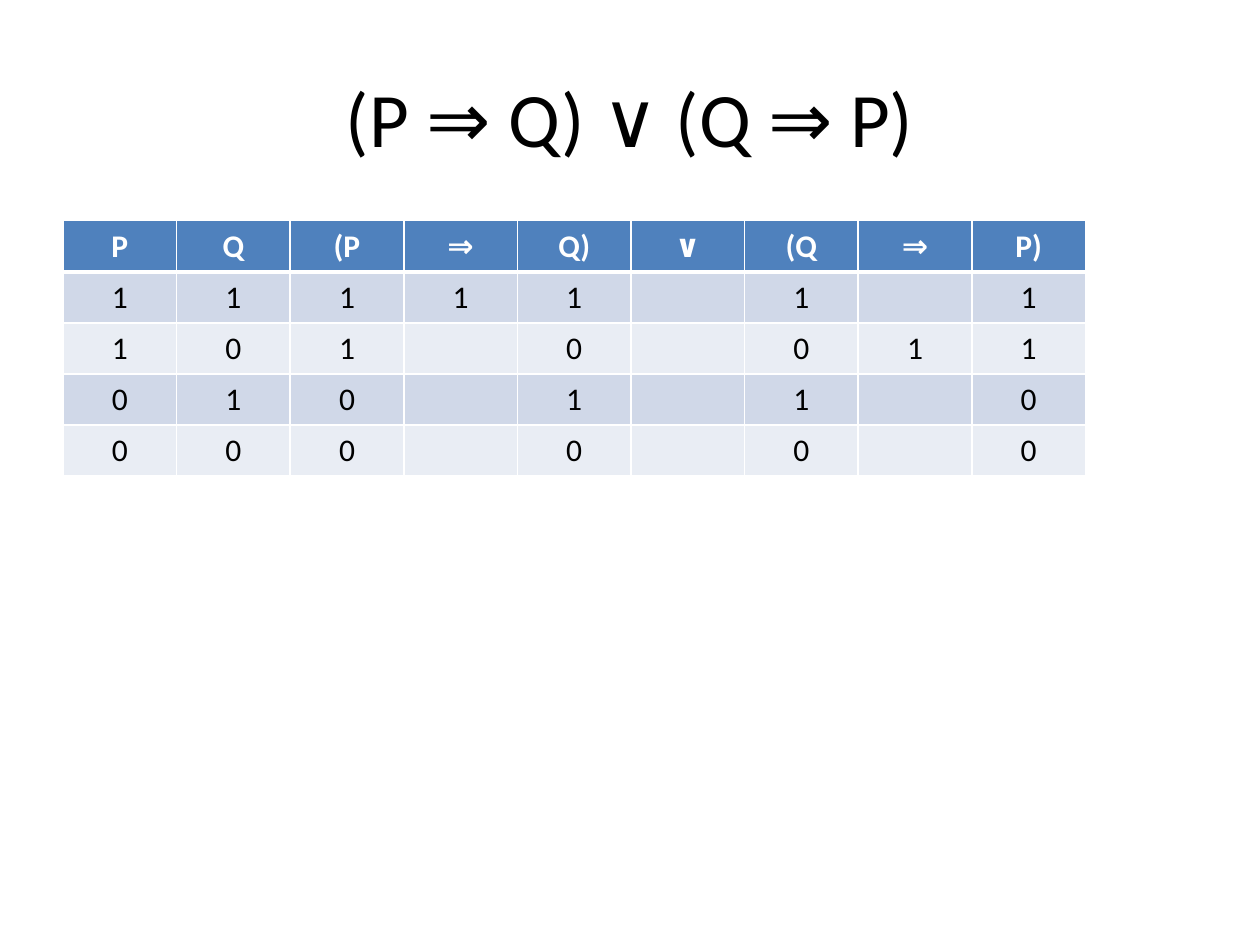
from dataclasses import dataclass

from lxml import etree
from pptx import Presentation
from pptx import util as u
from pptx.dml import color
from pptx.enum import text
from pptx.oxml import ns


@dataclass(frozen=True)
class Theme:
    font: str = "Calibri"
    title_size: int = 44
    cell_size: int = 18
    ink: str = "000000"
    paper: str = "FFFFFF"
    header: str = "4F81BD"
    bands: tuple = ("D0D8E8", "E9EDF4")
    thin: int = 1
    thick: int = 3


class Deck:
    """Hold the theme and the current slide, and draw each kind of element."""

    def __init__(self, theme, width, height):
        self.theme = theme
        self.prs = Presentation()
        self.prs.slide_width, self.prs.slide_height = u.Cm(width), u.Cm(height)
        self.s = self.prs.slides.add_slide(self.prs.slide_layouts[6])

    def add_text(self, tf, words, size, rgb, bold=False):
        p = tf.paragraphs[0]
        p.alignment = text.PP_ALIGN.CENTER
        r = p.add_run()
        r.text = words
        for name, value in {"name": self.theme.font, "size": u.Pt(size), "bold": bold}.items():
            setattr(r.font, name, value)
        r.font.color.rgb = color.RGBColor.from_string(rgb)

    def title(self, words, left, top, width, height):
        sp = self.s.shapes.add_textbox(*map(u.Cm, (left, top, width, height)))
        tf = sp.text_frame
        for name, value in {"word_wrap": True, "vertical_anchor": text.MSO_ANCHOR.MIDDLE}.items():
            setattr(tf, name, value)
        self.add_text(tf, words, self.theme.title_size, self.theme.ink)

    def border(self, cell, side, points):
        tc_pr = cell._tc.get_or_add_tcPr()
        ln = etree.SubElement(tc_pr, ns.qn(f"a:ln{side}"), w=str(u.Pt(points)))
        fill = etree.SubElement(ln, ns.qn("a:solidFill"))
        etree.SubElement(fill, ns.qn("a:srgbClr"), val=self.theme.paper)

    def cell(self, cell, words, row):
        t = self.theme
        is_header = row == 0
        widths = {"L": t.thin, "R": t.thin,
                  "T": t.thick if row == 1 else t.thin,
                  "B": t.thick if is_header else t.thin}
        for side, points in widths.items():
            self.border(cell, side, points)
        cell.fill.solid()
        back = t.header if is_header else t.bands[(row - 1) % 2]
        cell.fill.fore_color.rgb = color.RGBColor.from_string(back)
        if words:
            self.add_text(cell.text_frame, words, t.cell_size,
                          t.paper if is_header else t.ink, is_header)

    def table(self, rows, left, top, col_width, row_height):
        n_rows, n_cols = len(rows), len(rows[0])
        size = (left, top, col_width * n_cols, row_height * n_rows)
        tbl = self.s.shapes.add_table(n_rows, n_cols, *map(u.Cm, size)).table
        for col in tbl.columns:
            col.width = u.Cm(col_width)
        for i, row in enumerate(rows):
            tbl.rows[i].height = u.Cm(row_height)
            for j, words in enumerate(row):
                self.cell(tbl.cell(i, j), words, i)


def main():
    truth_table = [
        ["P", "Q", "(P", "⇒", "Q)", "∨", "(Q", "⇒", "P)"],
        ["1", "1", "1", "1", "1", "", "1", "", "1"],
        ["1", "0", "1", "", "0", "", "0", "1", "1"],
        ["0", "1", "0", "", "1", "", "1", "", "0"],
        ["0", "0", "0", "", "0", "", "0", "", "0"],
    ]
    deck = Deck(Theme(), 25.4, 19.05)
    deck.title("(P ⇒ Q) ∨ (Q ⇒ P)", 1.27, 0.76, 22.86, 3.18)
    deck.table(truth_table, 1.27, 4.45, 2.29, 1.03)
    deck.prs.save("out.pptx")


if __name__ == "__main__":
    main()
